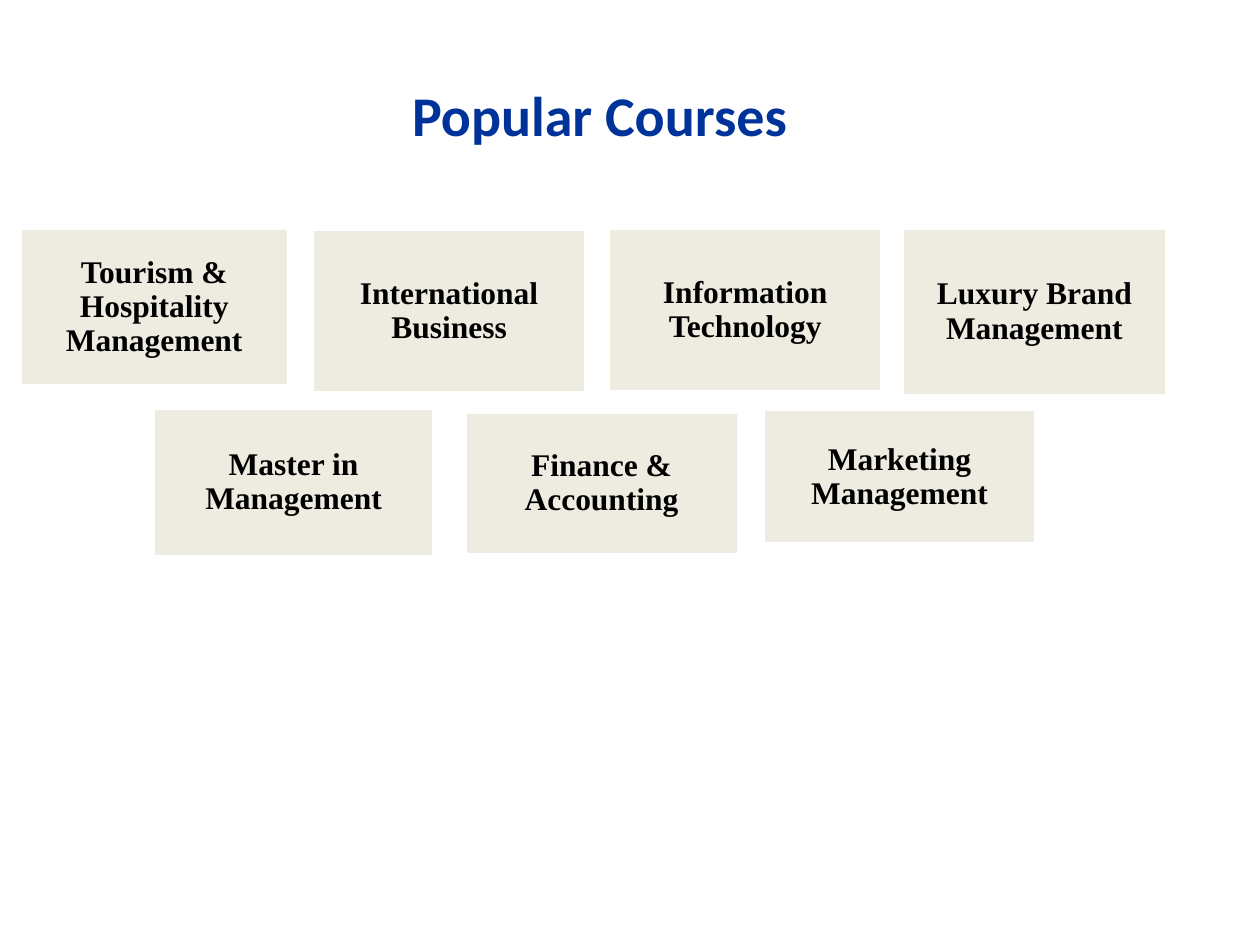
from pptx import Presentation
from pptx.dml.color import RGBColor
from pptx.enum.shapes import MSO_SHAPE
from pptx.enum.text import MSO_ANCHOR, MSO_AUTO_SIZE, PP_ALIGN
from pptx.util import Inches, Pt

COLORS = {"title": "003399", "text": "000000", "card": "EEECE1", "border": "FFFFFF"}

COURSES = [
    ("Tourism & Hospitality Management", 0.16, 1.81, 2.13, 1.25),
    ("International Business", 2.48, 1.82, 2.17, 1.3),
    ("Information Technology", 4.83, 1.81, 2.17, 1.3),
    ("Luxury Brand Management", 7.16, 1.81, 2.1, 1.33),
    ("Master in Management", 1.22, 3.24, 2.22, 1.18),
    ("Finance & Accounting", 3.69, 3.27, 2.17, 1.13),
    ("Marketing Management", 6.06, 3.25, 2.16, 1.07),
]


def color(name):
    """Return the named palette colour."""
    return RGBColor.from_string(COLORS[name])


def style_paragraph(p, font, size, color_name, align):
    """Set the bold font and the alignment of a paragraph."""
    p.alignment = align
    p.font.name = font
    p.font.size = Pt(size)
    p.font.bold = True
    p.font.color.rgb = color(color_name)


def set_title(slide, text):
    """Fill, place and format the title placeholder."""
    sp = slide.shapes.title
    sp.left, sp.top, sp.width, sp.height = map(Inches, (3.17, 0.55, 5.12, 0.67))
    tf = sp.text_frame
    tf.text = text
    tf.word_wrap = True
    tf.auto_size = MSO_AUTO_SIZE.NONE
    tf.vertical_anchor = MSO_ANCHOR.BOTTOM
    style_paragraph(tf.paragraphs[0], "Calibri", 32, "title", PP_ALIGN.LEFT)


def add_course(slide, text, left, top, width, height):
    """Add one course card with its centred name."""
    box = map(Inches, (left, top, width, height))
    sp = slide.shapes.add_shape(MSO_SHAPE.RECTANGLE, *box)
    sp.shadow.inherit = False
    sp.fill.solid()
    sp.fill.fore_color.rgb = color("card")
    sp.line.color.rgb = color("border")
    sp.line.width = Pt(2)
    tf = sp.text_frame
    tf.text = text
    tf.word_wrap = True
    tf.vertical_anchor = MSO_ANCHOR.MIDDLE
    tf.margin_left = tf.margin_right = tf.margin_top = tf.margin_bottom = Inches(0.07)
    p = tf.paragraphs[0]
    p.line_spacing = 0.9
    style_paragraph(p, "Times New Roman", 18, "text", PP_ALIGN.CENTER)


def main():
    """Build the slide and save it."""
    prs = Presentation()
    prs.slide_width, prs.slide_height = Inches(10), Inches(7.5)
    slide = prs.slides.add_slide(prs.slide_layouts[5])
    set_title(slide, "Popular Courses")
    for course in COURSES:
        add_course(slide, *course)
    prs.save("out.pptx")


if __name__ == "__main__":
    main()
